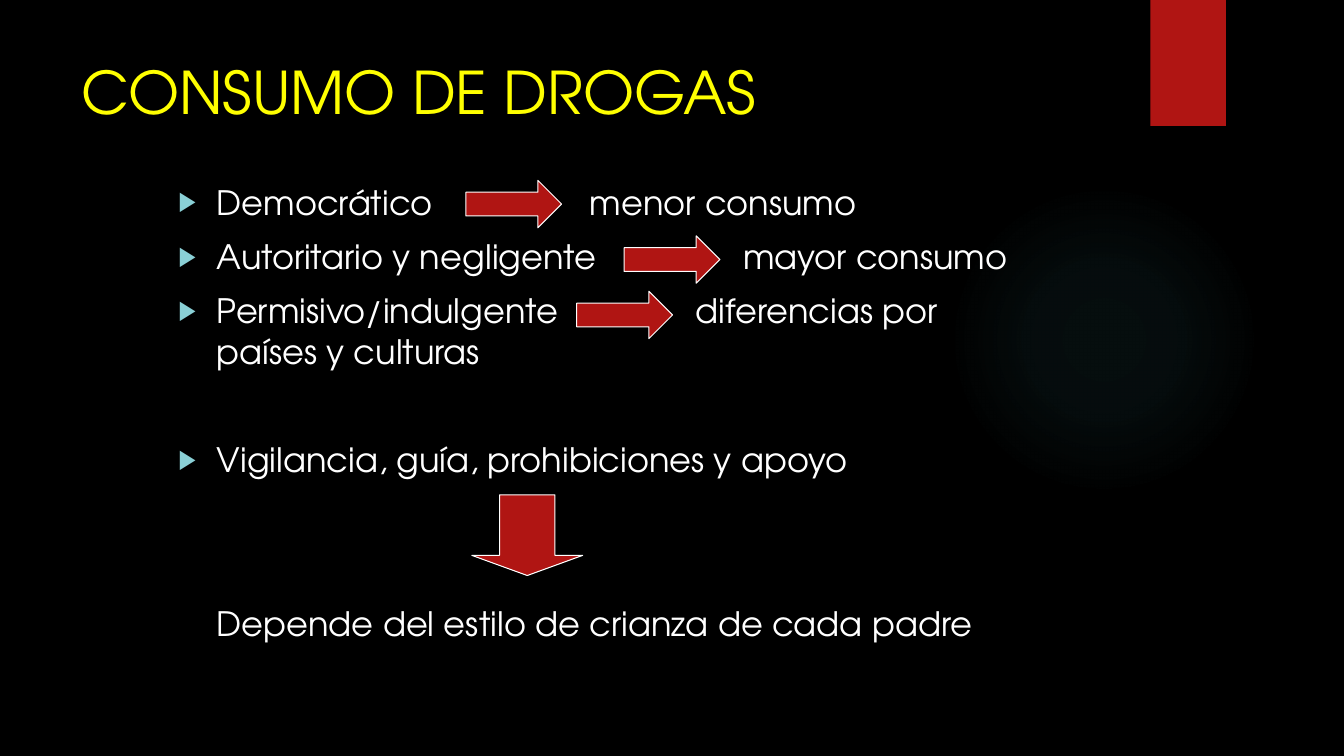
from lxml import etree
from pptx import Presentation
from pptx.dml.color import RGBColor
from pptx.enum.shapes import MSO_SHAPE as Shape
from pptx.enum.text import MSO_ANCHOR as Anchor, MSO_AUTO_SIZE as AutoSize, PP_ALIGN as Align
from pptx.oxml import parse_xml
from pptx.oxml.ns import qn
from pptx.util import Inches, Pt

FONT = "TeX Gyre Adventor"
RED, WHITE, YELLOW, TEAL, GLOW = "B01513", "FFFFFF", "FFFF00", "8AD0D6", "50B9C1"
INDENT = 0.38
ITEMS = [
    ("Democrático\tmenor consumo", 0, 4.08, True),
    ("Autoritario y negligente\tmayor consumo", 10, 5.6, True),
    ("Permisivo/indulgente\tdiferencias por\vpaíses y culturas", 10, 5.13, True),
    ("Vigilancia, guía, prohibiciones y apoyo", 49, None, True),
    ("Depende del estilo de crianza de cada padre", 88, None, False),
]
RIGHT_ARROW_LEFTS = [4.62, 6.19, 5.72]


def color(value):
    return RGBColor.from_string(value)


def add_filled(slide, kind, left, top, width, height, line=None):
    shape = slide.shapes.add_shape(kind, Inches(left), Inches(top), Inches(width), Inches(height))
    shape.shadow.inherit = False
    shape.fill.solid()
    shape.fill.fore_color.rgb = color(RED)
    if line:
        shape.line.color.rgb = color(line)
        shape.line.width = Pt(0.75)
    else:
        shape.line.fill.background()
    return shape


def send_to_back(slide, shape):
    slide.shapes._spTree.insert(2, shape._element)


def add_glow(slide):
    glow = add_filled(slide, Shape.OVAL, 9.41, 1.83, 3.08, 3.08)
    stops = "".join(
        f'<a:gs pos="{position}000"><a:srgbClr val="{GLOW}"><a:alpha val="{alpha}000"/></a:srgbClr></a:gs>'
        for position, alpha in [(0, 7), (36, 6), (69, 0)]
    )
    gradient = parse_xml(
        '<a:gradFill xmlns:a="http://schemas.openxmlformats.org/drawingml/2006/main">'
        f'<a:gsLst>{stops}</a:gsLst><a:path path="circle">'
        '<a:fillToRect l="50000" t="50000" r="50000" b="50000"/></a:path></a:gradFill>'
    )
    properties = glow._element.spPr
    properties.replace(properties.find(qn("a:solidFill")), gradient)
    send_to_back(slide, glow)


def place(placeholder, left, top, width, height):
    placeholder.left, placeholder.top = Inches(left), Inches(top)
    placeholder.width, placeholder.height = Inches(width), Inches(height)
    frame = placeholder.text_frame
    frame.word_wrap = True
    frame.auto_size = AutoSize.NONE
    frame.vertical_anchor = Anchor.TOP
    return frame


def format_text(paragraph, size, value):
    paragraph.alignment = Align.LEFT
    for run in paragraph.runs:
        run.font.name = FONT
        run.font.size = Pt(size)
        run.font.color.rgb = color(value)


def set_bullet_and_tab(paragraph, bulleted, tab):
    properties = paragraph._p.get_or_add_pPr()
    properties.set("marL", str(Inches(INDENT)))
    properties.set("indent", str(-Inches(INDENT) if bulleted else 0))
    if bulleted:
        bullet_color = etree.SubElement(properties, qn("a:buClr"))
        etree.SubElement(bullet_color, qn("a:srgbClr"), val=TEAL)
        etree.SubElement(properties, qn("a:buSzPct"), val="80000")
        etree.SubElement(properties, qn("a:buChar"), char="▶")
    else:
        etree.SubElement(properties, qn("a:buNone"))
    if tab:
        tabs = etree.SubElement(properties, qn("a:tabLst"))
        etree.SubElement(tabs, qn("a:tab"), pos=str(Inches(tab)), algn="l")


def fill_title(slide):
    frame = place(slide.shapes.title, 0.71, 0.5, 10.29, 1.53)
    frame.text = "CONSUMO DE DROGAS"
    format_text(frame.paragraphs[0], 42, YELLOW)


def fill_body(slide):
    frame = place(slide.placeholders[1], 1.67, 1.75, 10, 5.75)
    for index, (text, space, tab, bulleted) in enumerate(ITEMS):
        paragraph = frame.add_paragraph() if index else frame.paragraphs[0]
        paragraph.text = text
        set_bullet_and_tab(paragraph, bulleted, tab)
        paragraph.space_before = Pt(space)
        format_text(paragraph, 24, WHITE)


def main():
    """Build the slide on parenting styles and drug use."""
    presentation = Presentation()
    presentation.slide_width, presentation.slide_height = Inches(13.33), Inches(7.5)
    slide = presentation.slides.add_slide(presentation.slide_layouts[1])
    slide.background.fill.solid()
    slide.background.fill.fore_color.rgb = color("000000")
    send_to_back(slide, add_filled(slide, Shape.RECTANGLE, 11.41, 0, 0.75, 1.25))
    add_glow(slide)
    fill_title(slide)
    fill_body(slide)
    for row, left in enumerate(RIGHT_ARROW_LEFTS):
        add_filled(slide, Shape.RIGHT_ARROW, left, 1.79 + 0.55 * row, 0.95, 0.47, WHITE)
    down_arrow = add_filled(slide, Shape.DOWN_ARROW, 4.68, 4.91, 1.1, 0.8, WHITE)
    down_arrow.adjustments[1] = 0.25
    presentation.save("out.pptx")


if __name__ == "__main__":
    main()
